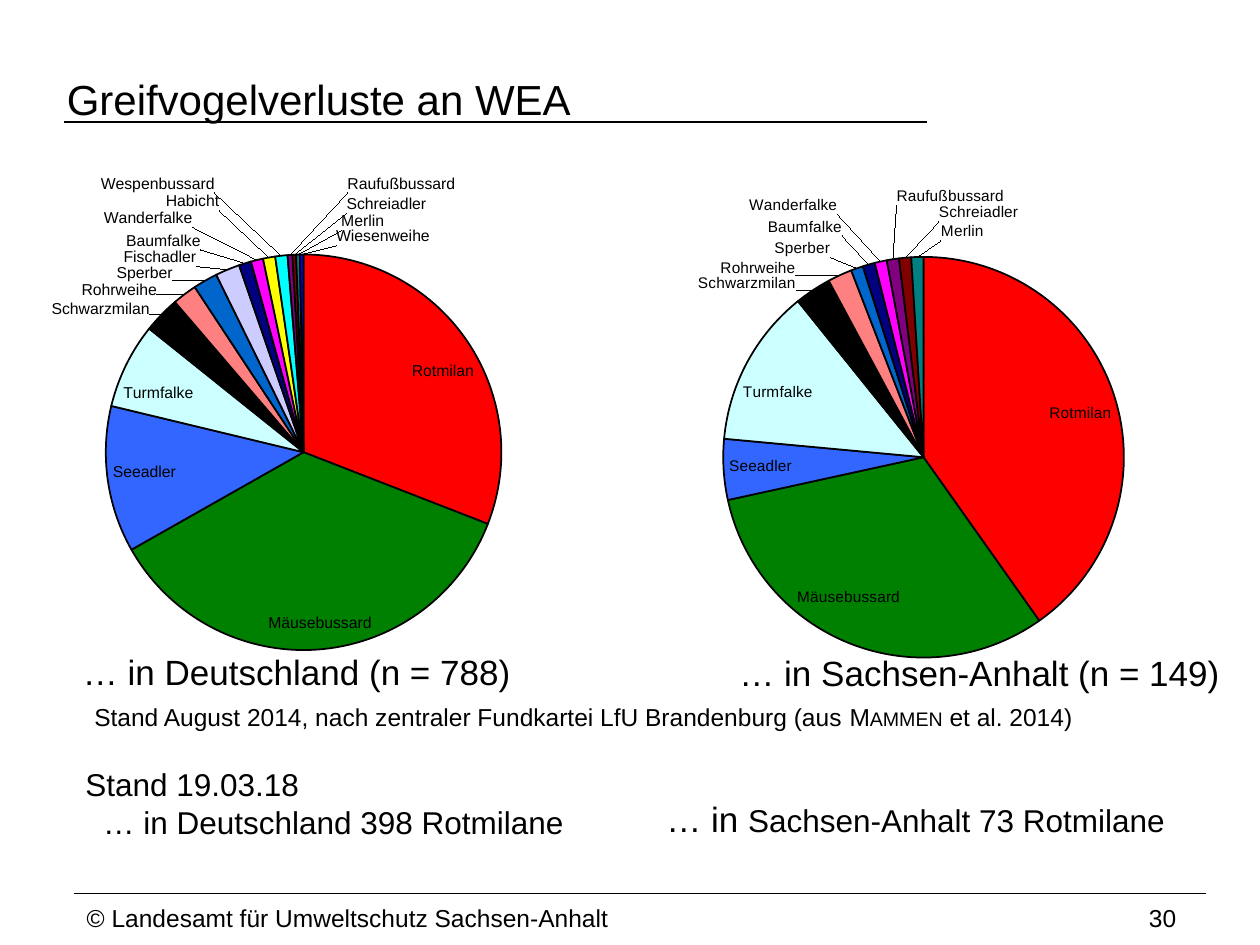
from copy import deepcopy
from dataclasses import dataclass
from itertools import accumulate
from math import cos, radians, sin

from lxml import etree
from pptx import Presentation
from pptx.chart.data import CategoryChartData
from pptx.dml.color import RGBColor
from pptx.enum.chart import XL_CHART_TYPE, XL_LABEL_POSITION
from pptx.enum.shapes import MSO_CONNECTOR
from pptx.enum.text import MSO_ANCHOR, PP_ALIGN
from pptx.oxml import parse_xml
from pptx.oxml.ns import nsdecls, qn
from pptx.util import Inches, Pt

FONT = "Arial"
BLACK = RGBColor(0x00, 0x00, 0x00)
SPECIES = {
    "Rotmilan": RGBColor(0xFF, 0x00, 0x00),
    "Mäusebussard": RGBColor(0x00, 0x80, 0x00),
    "Seeadler": RGBColor(0x33, 0x66, 0xFF),
    "Turmfalke": RGBColor(0xCC, 0xFF, 0xFF),
    "Schwarzmilan": BLACK,
    "Rohrweihe": RGBColor(0xFF, 0x80, 0x80),
    "Sperber": RGBColor(0x00, 0x66, 0xCC),
    "Fischadler": RGBColor(0xCC, 0xCC, 0xFF),
    "Baumfalke": RGBColor(0x00, 0x00, 0x80),
    "Wanderfalke": RGBColor(0xFF, 0x00, 0xFF),
    "Habicht": RGBColor(0xFF, 0xFF, 0x00),
    "Wespenbussard": RGBColor(0x00, 0xFF, 0xFF),
    "Raufußbussard": RGBColor(0x80, 0x00, 0x80),
    "Schreiadler": RGBColor(0x80, 0x00, 0x00),
    "Merlin": RGBColor(0x00, 0x80, 0x80),
    "Wiesenweihe": RGBColor(0x00, 0x00, 0xFF),
}


@dataclass
class Pie:
    box: tuple[float, float, float, float]
    center: tuple[float, float]
    radius: float
    label_size: float
    values: list[float | None]
    anchors: dict[str, tuple[float, float]]  # where the outer labels stand, in inches


@dataclass
class Run:
    text: str
    size: float
    small_caps: bool = False


@dataclass
class Line:
    runs: list[Run]
    indent: float = 0


@dataclass
class Note:
    box: tuple[float, float, float, float]
    lines: list[Line]
    anchor: MSO_ANCHOR = MSO_ANCHOR.TOP


PIES = [
    Pie((-0.93, 1.15, 6.56, 4.27), (2.41, 3.59), 1.57, 9,
        [31, 36, 12, 7, 3, 2, 2, 2, 1, 1, 1, 1, 0.4, 0.3, 0.3, 0.3],
        {"Schwarzmilan": (1.23, 2.57), "Rohrweihe": (1.28, 2.42), "Sperber": (1.4, 2.29),
         "Fischadler": (1.58, 2.17), "Baumfalke": (1.61, 2.04), "Wanderfalke": (1.54, 1.86),
         "Habicht": (1.75, 1.73), "Wespenbussard": (1.71, 1.59), "Raufußbussard": (3.19, 1.59),
         "Schreiadler": (3.07, 1.75), "Merlin": (2.88, 1.89), "Wiesenweihe": (3.04, 2.01)}),
    Pie((3.94, 1.31, 6.75, 4.65), (7.33, 3.63), 1.59, 8.8,
        [41, 32, 5, 13, 3, 2, 1, None, 1, 1, None, None, 1, 1, 1, None],
        {"Schwarzmilan": (6.35, 2.37), "Rohrweihe": (6.34, 2.26), "Sperber": (6.61, 2.1),
         "Baumfalke": (6.7, 1.93), "Wanderfalke": (6.66, 1.76), "Raufußbussard": (7.98, 1.69),
         "Schreiadler": (8.09, 1.82), "Merlin": (7.64, 1.97)}),
]

NOTES = [
    Note((0.56, 5.11, 4.92, 0.61), [Line([Run("… in Deutschland (n = 788)", 20)])]),
    Note((5.77, 5.12, 4.92, 0.61), [Line([Run("… in Sachsen-Anhalt (n = 149)", 20)])]),
    Note((0.65, 5.52, 8.44, 0.43), [Line([
        Run("Stand August 2014, nach zentraler Fundkartei LfU Brandenburg (aus ", 14),
        Run("Mammen", 14, small_caps=True),
        Run(" et al. 2014)", 14)])]),
    Note((0.58, 6.02, 4.2, 0.71), [
        Line([Run("Stand 19.03.18", 18)]),
        Line([Run("… in Deutschland 398 Rotmilane", 18)], indent=0.14)]),
    Note((5.19, 6.28, 4.3, 0.44), [Line([
        Run("… in ", 20), Run("Sachsen-Anhalt 73 Rotmilane", 18)])]),
    Note((0.59, 7.09, 4.6, 0.39),
         [Line([Run("© Landesamt für Umweltschutz Sachsen-Anhalt", 14)])], MSO_ANCHOR.MIDDLE),
    Note((9.02, 7.09, 0.58, 0.39), [Line([Run("30", 14)])], MSO_ANCHOR.MIDDLE),
]


def set_font(font, size: float) -> None:
    font.name = FONT
    font.size = Pt(size)
    font.bold = False
    font.color.rgb = BLACK


def layout_xml(x: float, y: float, size: tuple[float, float] | None = None):
    """Manual layout: an offset for a label, or with a size the inner plot area."""
    parts = [("x", x), ("y", y)]
    if size:
        parts = [("layoutTarget", "inner"), ("xMode", "edge"), ("yMode", "edge"),
                 *parts, ("w", size[0]), ("h", size[1])]
    body = "".join(f'<c:{tag} val="{val}"/>' for tag, val in parts)
    return parse_xml(f'<c:layout {nsdecls("c")}><c:manualLayout>{body}</c:manualLayout></c:layout>')


def plot_layout(pie: Pie):
    left, top, width, height = pie.box
    (cx, cy), radius = pie.center, pie.radius
    return layout_xml((cx - radius - left) / width, (cy - radius - top) / height,
                      (2 * radius / width, 2 * radius / height))


def label_offsets(pie: Pie) -> dict[str, tuple[float, float]]:
    """Distance of each outer label from the rim of its slice, as parts of the chart size."""
    width, height = pie.box[2:]
    (cx, cy), radius = pie.center, pie.radius
    values = [v or 0 for v in pie.values]
    ends = list(accumulate(values))
    offsets = {}
    for name, value, end in zip(SPECIES, values, ends):
        if name in pie.anchors:
            angle = radians(360 * (end - value / 2) / ends[-1])
            x, y = pie.anchors[name]
            offsets[name] = (round((x - cx - radius * sin(angle)) / width, 4),
                             round((y - cy + radius * cos(angle)) / height, 4))
    return offsets


def add_labels(series, pie: Pie) -> None:
    labels = series.data_labels
    labels.show_category_name = True
    labels.show_value = False
    labels.position = XL_LABEL_POSITION.BEST_FIT
    set_font(labels.font, pie.label_size)
    d_lbls = labels._element
    leader = d_lbls.find(qn("c:showLeaderLines"))
    if leader is None:
        leader = etree.SubElement(d_lbls, qn("c:showLeaderLines"))
    leader.set("val", "1")
    offsets = label_offsets(pie)
    shows = "".join(f'<c:show{k} val="{int(k == "CatName")}"/>' for k in
                    ("LegendKey", "Val", "CatName", "SerName", "Percent", "BubbleSize"))
    position = 0
    for i, (name, value) in enumerate(zip(SPECIES, pie.values)):
        if value is not None and name not in offsets:
            continue
        body = '<c:delete val="1"/>' if value is None else f'<c:dLblPos val="bestFit"/>{shows}'
        d_lbl = parse_xml(f'<c:dLbl {nsdecls("c")}><c:idx val="{i}"/>{body}</c:dLbl>')
        if value is not None:
            d_lbl.insert(1, layout_xml(*offsets[name]))
            d_lbl.insert(2, deepcopy(d_lbls.find(qn("c:txPr"))))
        d_lbls.insert(position, d_lbl)
        position += 1


def add_pie(slide, pie: Pie) -> None:
    data = CategoryChartData()
    data.categories = list(SPECIES)
    data.add_series("Series 1", pie.values)
    chart = slide.shapes.add_chart(XL_CHART_TYPE.PIE, *map(Inches, pie.box), data).chart
    chart.has_title = False
    chart.has_legend = False
    set_font(chart.font, 10.8)
    series = chart.plots[0].series[0]
    for i, color in enumerate(SPECIES.values()):
        fmt = series.points[i].format
        fmt.fill.solid()
        fmt.fill.fore_color.rgb = color
        fmt.line.color.rgb = BLACK
        fmt.line.width = Pt(1)
    add_labels(series, pie)
    area = chart._chartSpace.find(".//" + qn("c:plotArea"))
    for old in area.findall(qn("c:layout")):
        area.remove(old)
    area.insert(0, plot_layout(pie))


def add_note(slide, note: Note) -> None:
    tf = slide.shapes.add_textbox(*map(Inches, note.box)).text_frame
    tf.word_wrap = True
    tf.vertical_anchor = note.anchor
    for i, line in enumerate(note.lines):
        p = tf.add_paragraph() if i else tf.paragraphs[0]
        if line.indent:
            p._p.get_or_add_pPr().set("marL", str(Inches(line.indent)))
        for run in line.runs:
            r = p.add_run()
            r.text = run.text
            set_font(r.font, run.size)
            if run.small_caps:
                r._r.get_or_add_rPr().set("cap", "small")


def add_rule(slide, x1: float, x2: float, y: float, weight: float) -> None:
    ln = slide.shapes.add_connector(MSO_CONNECTOR.STRAIGHT, *map(Inches, (x1, y, x2, y)))
    ln.line.color.rgb = BLACK
    ln.line.width = Pt(weight)
    etree.SubElement(ln._element.spPr, qn("a:effectLst"))


def format_title(title) -> None:
    title.left, title.top, title.width, title.height = map(Inches, (0.43, 0.53, 4.92, 0.61))
    tf = title.text_frame
    tf.vertical_anchor = MSO_ANCHOR.TOP
    p = tf.paragraphs[0]
    p.alignment = PP_ALIGN.LEFT
    r = p.add_run()
    r.text = "Greifvogelverluste an WEA"
    set_font(r.font, 24)


def main() -> None:
    prs = Presentation()
    prs.slide_width, prs.slide_height = Inches(10), Inches(7.5)
    slide = prs.slides.add_slide(prs.slide_layouts[5])
    format_title(slide.shapes.title)
    add_rule(slide, 0.59, 9.57, 7.09, 0.75)
    for pie in PIES:
        add_pie(slide, pie)
    for note in NOTES:
        add_note(slide, note)
    add_rule(slide, 0.51, 7.36, 0.97, 1)
    prs.save("out.pptx")


if __name__ == "__main__":
    main()
